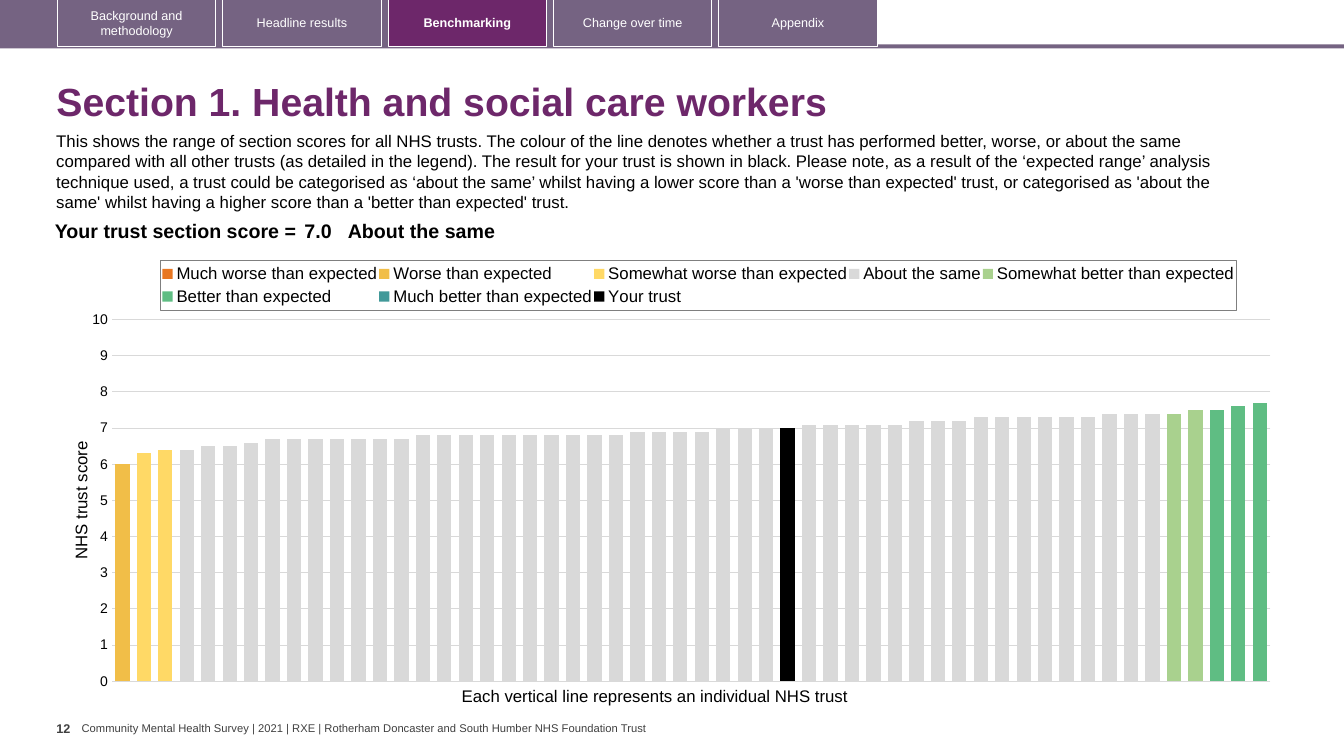
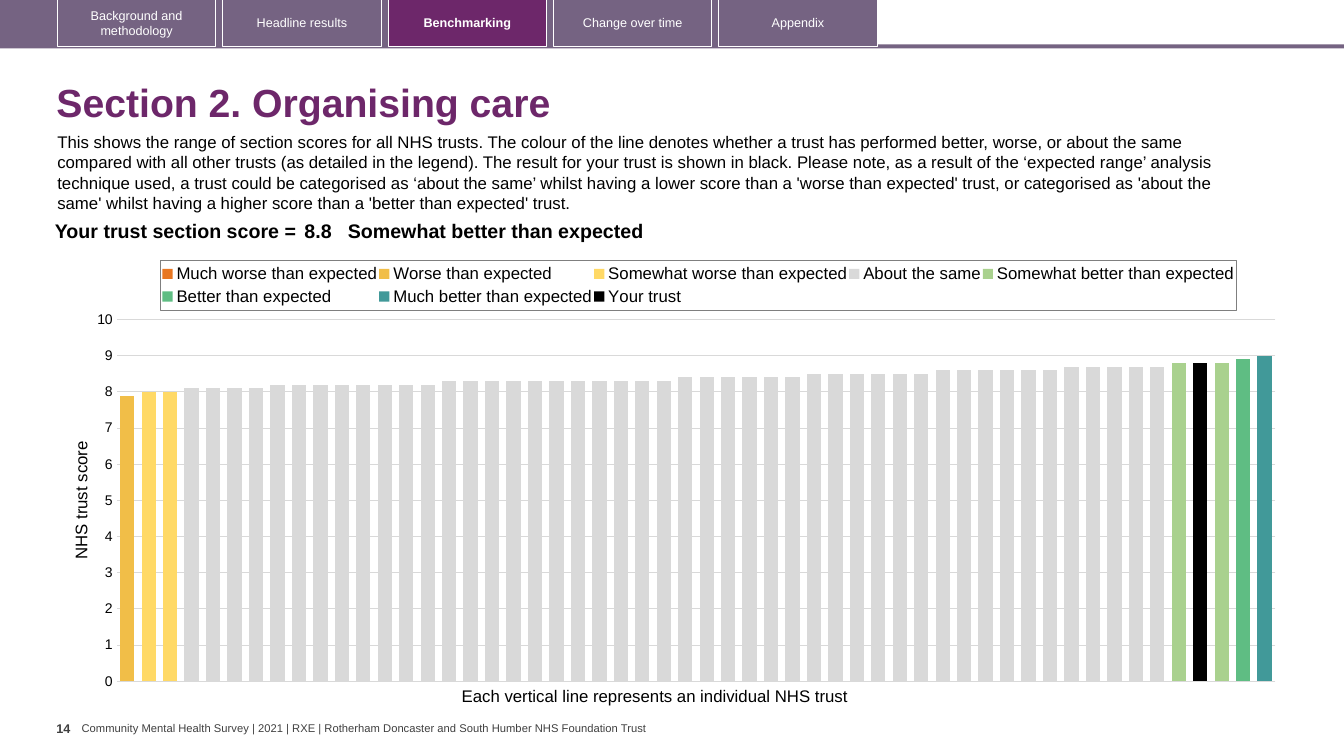
from copy import deepcopy
from itertools import chain, repeat
from pptx import Presentation
from pptx.chart.data import CategoryChartData
from pptx.dml.color import RGBColor
from pptx.enum.chart import XL_CHART_TYPE, XL_LEGEND_POSITION, XL_TICK_MARK
from pptx.enum.shapes import MSO_SHAPE
from pptx.enum.text import MSO_ANCHOR, MSO_AUTO_SIZE, PP_ALIGN
from pptx.oxml import parse_xml
from pptx.oxml.ns import nsdecls, qn
from pptx.util import Inches, Pt

FONT = "Arial"
HUES = {"band": "756382", "plum": "6D276A", "white": "FFFFFF", "black": "000000",
        "foot": "404040", "grid": "D9D9D9", "frame": "7F7F7F"}
BANDS = {"Much worse than expected": "E87722", "Worse than expected": "F1BE48",
         "Somewhat worse than expected": "FFD966", "About the same": "D9D9D9",
         "Somewhat better than expected": "A9D18E", "Better than expected": "5FBD83",
         "Much better than expected": "419999", "Your trust": "000000"}
TABS = ["Background and methodology", "Headline results", "Benchmarking",
        "Change over time", "Appendix"]
HERE = "Benchmarking"
FOOT = ("Community Mental Health Survey | 2021 | RXE | "
        "Rotherham Doncaster and South Humber NHS Foundation Trust")
INTRO = ("This shows the range of section scores for all NHS trusts. The colour of the line "
         "denotes whether a trust has performed better, worse, or about the same compared with "
         "all other trusts (as detailed in the legend). The result for your trust is shown in "
         "black. Please note, as a result of the ‘expected range’ analysis technique used, a "
         "trust could be categorised as ‘about the same’ whilst having a lower score than a "
         "'worse than expected' trust, or categorised as 'about the same' whilst having a higher "
         "score than a 'better than expected' trust.")
LEAD = "Your trust section score ="
XNAME = "Each vertical line represents an individual NHS trust"
YNAME = "NHS trust score"
COUNT = 54

PAGES = [
    {"num": "12", "title": "Section 1. Health and social care workers",
     "score": "7.0", "verdict": "About the same", "drop": 0, "left": 0.036,
     "own": (31, 7),
     "runs": {"Worse than expected": [(6, 1)],
              "Somewhat worse than expected": [(6.3, 1), (6.4, 1)],
              "About the same": [(6.4, 1), (6.5, 2), (6.6, 1), (6.7, 7), (6.8, 10), (6.9, 4),
                                 (7, 4), (7.1, 5), (7.2, 3), (7.3, 6), (7.4, 3)],
              "Somewhat better than expected": [(7.4, 1), (7.5, 1)],
              "Better than expected": [(7.5, 1), (7.6, 1), (7.7, 1)]}},
    {"num": "14", "title": "Section 2. Organising care",
     "score": "8.8", "verdict": "Somewhat better than expected", "drop": 0.01, "left": 0.04,
     "own": (50, 8.8),
     "runs": {"Worse than expected": [(7.9, 1)],
              "Somewhat worse than expected": [(8, 2)],
              "About the same": [(8.1, 4), (8.2, 8), (8.3, 11), (8.4, 6), (8.5, 6), (8.6, 6),
                                 (8.7, 5)],
              "Somewhat better than expected": [(8.8, 3)],
              "Better than expected": [(8.9, 1)],
              "Much better than expected": [(9, 1)]}},
]

SIDE = f"""<c:axes {nsdecls("c", "a")}>
<c:valAx><c:axId val="7001"/><c:scaling><c:orientation val="minMax"/><c:max val="10"/>
<c:min val="0"/></c:scaling><c:delete val="0"/><c:axPos val="r"/>
<c:majorTickMark val="out"/><c:minorTickMark val="none"/><c:tickLblPos val="none"/>
<c:spPr><a:ln><a:noFill/></a:ln></c:spPr><c:crossAx val="7002"/><c:crosses val="max"/></c:valAx>
<c:catAx><c:axId val="7002"/><c:scaling><c:orientation val="minMax"/></c:scaling>
<c:delete val="1"/><c:axPos val="b"/><c:majorTickMark val="none"/>
<c:minorTickMark val="none"/><c:tickLblPos val="nextTo"/><c:crossAx val="7001"/>
<c:crosses val="autoZero"/></c:catAx></c:axes>"""


def tint(name):
    return RGBColor.from_string(HUES.get(name, name))


def style(font, size, hue="black", bold=False):
    font.name, font.size, font.bold = FONT, Pt(size), bold
    font.color.rgb = tint(hue)


def write(frame, text, size, hue="black", bold=False, align=PP_ALIGN.LEFT):
    para = frame.paragraphs[0]
    para.alignment = align
    run = para.add_run()
    run.text = text
    style(run.font, size, hue, bold)
    return para


def inset(item, side, top):
    item.margin_left = item.margin_right = Inches(side)
    item.margin_top = item.margin_bottom = Inches(top)


def label(slide, spot, text, size, hue="black", bold=False, wrap=False, pad=(0.1, 0.05)):
    frame = slide.shapes.add_textbox(*map(Inches, spot)).text_frame
    frame.word_wrap = wrap
    inset(frame, *pad)
    write(frame, text, size, hue, bold)
    return frame


def block(slide, spot, fill=None, line=None):
    shape = slide.shapes.add_shape(MSO_SHAPE.RECTANGLE, *map(Inches, spot))
    shape.shadow.inherit = False
    if fill:
        shape.fill.solid()
        shape.fill.fore_color.rgb = tint(fill)
    else:
        shape.fill.background()
    if line:
        shape.line.color.rgb = tint(line)
        shape.line.width = Pt(0.75)
    else:
        shape.line.fill.background()
    return shape


def frame_page(slide, page):
    block(slide, (-0.03, 0.44, 13.36, 0.04), "band")
    block(slide, (-0.03, 0, 8.73, 0.47), "band")
    for i, name in enumerate(TABS):
        live = name == HERE
        tab = block(slide, (0.57 + 1.64 * i, -0.01, 1.57, 0.47),
                    "plum" if live else None, "white")
        tab.text_frame.word_wrap = True
        tab.text_frame.vertical_anchor = MSO_ANCHOR.MIDDLE
        write(tab.text_frame, name, 9, "white", live, PP_ALIGN.CENTER)
    foot = label(slide, (0.81, 7.16, 5.68, 0.13), FOOT, 8, "foot", pad=(0, 0))
    foot.vertical_anchor = MSO_ANCHOR.MIDDLE
    label(slide, (0.56, 7.1, 0.25, 0.4), page["num"], 9, "foot", True, pad=(0, 0.05))


def head(slide, page):
    title = slide.shapes.title
    title.left, title.top, title.width, title.height = map(
        Inches, (0.46, 0.67 + page["drop"], 12.49, 0.72))
    frame = title.text_frame
    frame.auto_size = MSO_AUTO_SIZE.NONE
    frame.vertical_anchor = MSO_ANCHOR.MIDDLE
    write(frame, page["title"], 28, "plum", True).line_spacing = 0.9


def layout(x, y, w, h, inner=False):
    target = '<c:layoutTarget val="inner"/>' if inner else ""
    return parse_xml(
        f'<c:layout {nsdecls("c")}><c:manualLayout>{target}'
        '<c:xMode val="edge"/><c:yMode val="edge"/>'
        f'<c:x val="{x}"/><c:y val="{y}"/><c:w val="{w}"/><c:h val="{h}"/>'
        '</c:manualLayout></c:layout>')


def series(page):
    start = 0
    for name in BANDS:
        vals = [None] * COUNT
        runs = page["runs"].get(name, [])
        part = list(chain.from_iterable(repeat(v, n) for v, n in runs))
        vals[start:start + len(part)] = part
        start += len(part)
        if name == "Your trust":
            spot, score = page["own"]
            vals[spot] = score
        yield name, vals


def split(area):
    bars = area.find(qn("c:barChart"))
    side = deepcopy(bars)
    sets = qn("c:ser")
    bars.remove(bars.findall(sets)[-1])
    for old in side.findall(sets)[:-1]:
        side.remove(old)
    for tag, key in zip(side.findall(qn("c:axId")), ("7002", "7001")):
        tag.set("val", key)
    bars.addnext(side)
    last = area.find(qn("c:valAx"))
    for axis in reversed(list(parse_xml(SIDE))):
        last.addnext(axis)


def plot(slide, page):
    data = CategoryChartData()
    data.categories = [str(i + 1) for i in range(COUNT)]
    for name, vals in series(page):
        data.add_series(name, vals)
    chart = slide.shapes.add_chart(XL_CHART_TYPE.COLUMN_CLUSTERED,
                                   *map(Inches, (0.67, 2.47, 12.15, 4.44)), data).chart
    chart.has_title = False
    style(chart.font, 10)
    chart.font.name = "Calibri"
    bars = chart.plots[0]
    bars.vary_by_categories = False
    bars.gap_width, bars.overlap = 50, 100
    for item, hue in zip(bars.series, BANDS.values()):
        item.format.fill.solid()
        item.format.fill.fore_color.rgb = tint(hue)
    chart.category_axis.visible = False

    axis = chart.value_axis
    axis.minimum_scale, axis.maximum_scale, axis.major_unit = 0, 10, 1
    axis.major_tick_mark = XL_TICK_MARK.NONE
    axis.format.line.fill.background()
    grid = axis.major_gridlines.format.line
    grid.color.rgb, grid.width = tint("grid"), Pt(0.75)
    style(axis.tick_labels.font, 10)
    write(axis.axis_title.text_frame, YNAME, 12, align=PP_ALIGN.CENTER)

    chart.has_legend = True
    chart.legend.position = XL_LEGEND_POSITION.TOP
    chart.legend.include_in_layout = False
    style(chart.legend.font, 12)

    area = chart.element.find(".//" + qn("c:plotArea"))
    turn = area.find(f'{qn("c:valAx")}/{qn("c:title")}//{qn("a:bodyPr")}')
    turn.set("rot", "-5400000")
    turn.set("vert", "horz")
    for old in area.findall(qn("c:layout")):
        area.remove(old)
    area.insert(0, layout(page["left"], 0.158, 0.946, 0.808, True))
    split(area)
    key = chart.element.find(".//" + qn("c:legend"))
    for old in key.findall(qn("c:layout")):
        key.remove(old)
    key.find(qn("c:legendPos")).addnext(layout(0.076, 0.025, 0.878, 0.112))
    key.find(qn("c:overlay")).addnext(parse_xml(
        f'<c:spPr {nsdecls("c", "a")}><a:ln w="9525"><a:solidFill>'
        f'<a:srgbClr val="{HUES["frame"]}"/></a:solidFill></a:ln></c:spPr>'))


def result(slide, page):
    table = slide.shapes.add_table(1, 3, *map(Inches, (0.35, 2.15, 11.69, 0.31))).table
    table.first_row = table.horz_banding = False
    cells = [(LEAD, 2.63, 0.04, PP_ALIGN.RIGHT), (page["score"], 0.47, 0.04, PP_ALIGN.LEFT),
             (page["verdict"], 8.59, 0, PP_ALIGN.LEFT)]
    for i, (text, width, side, align) in enumerate(cells):
        table.columns[i].width = Inches(width)
        cell = table.cell(0, i)
        cell.fill.background()
        inset(cell, side, 0.04)
        write(cell.text_frame, text, 14, bold=True, align=align)


def main():
    deck = Presentation()
    deck.slide_width, deck.slide_height = Inches(13.33), Inches(7.5)
    for page in PAGES:
        slide = deck.slides.add_slide(deck.slide_layouts[5])
        frame_page(slide, page)
        head(slide, page)
        drop = page["drop"]
        label(slide, (0.46 + drop, 1.25 + drop, 12.13, 0.91), INTRO, 12, wrap=True)
        label(slide, (4.48, 6.75, 4.11, 0.3), XNAME, 12)
        plot(slide, page)
        result(slide, page)
    deck.save("out.pptx")


if __name__ == "__main__":
    main()
